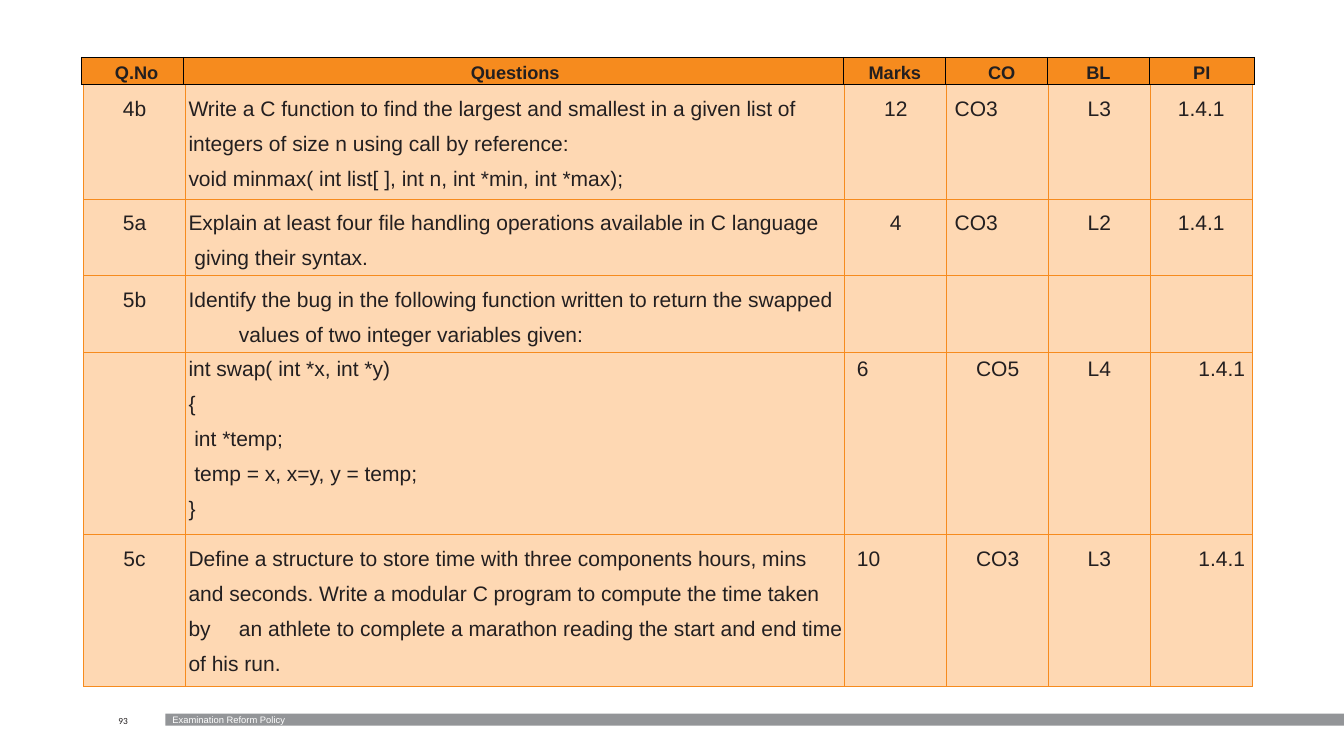
import pptx
import pptx.dml.color
import pptx.enum.shapes
import pptx.enum.text
import pptx.oxml
import pptx.oxml.ns
import pptx.util
from dataclasses import dataclass

Inches = pptx.util.Inches
ALIGN = pptx.enum.text.PP_ALIGN
MIDDLE = pptx.enum.text.MSO_ANCHOR.MIDDLE
TOP = pptx.enum.text.MSO_ANCHOR.TOP


@dataclass(frozen=True)
class Theme:
    ink: str = "231F20"
    orange: str = "F68B1E"
    peach: str = "FED8B3"
    footer_grey: str = "939598"
    white: str = "FFFFFF"
    black: str = "000000"
    font: str = "Arial"
    number_font: str = "Calibri"
    body_size: float = 15
    header_size: float = 13
    footer_size: float = 6.7


THEME = Theme()


@dataclass(frozen=True)
class Column:
    align: int = ALIGN.CENTER
    indent: float = 0
    right: float = 0


@dataclass(frozen=True)
class TableLook:
    fill: str
    border: str
    border_width: float
    size: float
    bold: bool
    spacing: float
    anchor: int
    top: float


HEADER = TableLook(THEME.orange, THEME.black, 1, THEME.header_size, True, 1.15, MIDDLE, 0.02)
BODY = TableLook(THEME.peach, THEME.orange, 0.75, THEME.body_size, False, 1.5, TOP, 0.01)

CENTERED = Column()
QUESTION = Column(ALIGN.LEFT, 0.03)
BODY_WIDTHS = [1.01, 6.54, 1.01, 1.01, 1.01, 1.01]

# Paragraphs are parted by "\n", lines within one by "\v"
HEADINGS = [("Q.No", "Questions", "Marks", "CO", "BL", "PI")]
UPPER_QUESTIONS = [
    ("4b", "Write a C function to find the largest and smallest in a given list of\n"
           "integers of size n using call by reference:\n"
           "void minmax( int list[ ], int n, int *min, int *max);", "12", "CO3", "L3", "1.4.1"),
    ("5a", "Explain at least four file handling operations available in C language\n"
           " giving their syntax.", "4", "CO3", "L2", "1.4.1"),
    ("5b", "Identify the bug in the following function written to return the swapped\v"
           "\tvalues of two integer variables given:", "", "", "", ""),
]
LOWER_QUESTIONS = [
    ("", "int swap( int *x, int *y)\n{\n int *temp;\n temp = x, x=y, y = temp;\n}",
     "6", "CO5", "L4", "1.4.1"),
    ("5c", "Define a structure to store time with three components hours, mins\v"
           "and seconds. Write a modular C program to compute the time taken\v"
           "by\tan athlete to complete a marathon reading the start and end time of his run.",
     "10", "CO3", "L3", "1.4.1"),
]


def rgb(colour):
    return pptx.dml.color.RGBColor.from_string(colour)


def add_run(paragraph, text, size, colour, font=THEME.font, bold=False):
    run = paragraph.add_run()
    run.text = text
    run.font.size = pptx.util.Pt(size)
    run.font.name = font
    run.font.bold = bold
    run.font.color.rgb = rgb(colour)


def set_indent(paragraph, indent):
    properties = paragraph._p.get_or_add_pPr()
    properties.set("marL", str(Inches(indent)))
    properties.set("indent", "0")


def set_tab(paragraph, position):
    paragraph._p.get_or_add_pPr().append(pptx.oxml.parse_xml(
        f'<a:tabLst {pptx.oxml.ns.nsdecls("a")}>'
        f'<a:tab pos="{Inches(position)}" algn="l"/></a:tabLst>'))


def set_borders(cell, colour, width):
    for side in ("lnL", "lnR", "lnT", "lnB"):
        cell._tc.get_or_add_tcPr().append(pptx.oxml.parse_xml(
            f'<a:{side} {pptx.oxml.ns.nsdecls("a")} w="{pptx.util.Pt(width)}">'
            f'<a:solidFill><a:srgbClr val="{colour}"/></a:solidFill></a:{side}>'))


def fill_cell(cell, text, column, look):
    set_borders(cell, look.border, look.border_width)
    cell.fill.solid()
    cell.fill.fore_color.rgb = rgb(look.fill)
    cell.vertical_anchor = look.anchor
    cell.margin_left = cell.margin_bottom = 0
    cell.margin_top = Inches(look.top)
    cell.margin_right = Inches(column.right)
    if not text:
        cell.text_frame.paragraphs[0].font.size = pptx.util.Pt(look.size)
        return
    for i, wording in enumerate(text.split("\n")):
        frame = cell.text_frame
        paragraph = frame.add_paragraph() if i else frame.paragraphs[0]
        paragraph.alignment = column.align
        paragraph.line_spacing = look.spacing
        set_indent(paragraph, column.indent)
        if "\t" in wording:
            set_tab(paragraph, 0.23 if "\v\t" in wording else 0.63)
        for j, line in enumerate(wording.split("\v")):
            if j:
                paragraph.add_line_break()
            add_run(paragraph, line, look.size, THEME.ink, bold=look.bold)


def add_question_table(slide, left, top, widths, heights, rows, columns, look):
    table = slide.shapes.add_table(
        len(rows), len(widths), Inches(left), Inches(top),
        Inches(sum(widths)), Inches(sum(heights))).table
    table.first_row = table.horz_banding = False
    for column, width in zip(table.columns, widths):
        column.width = Inches(width)
    for r, (row, height) in enumerate(zip(rows, heights)):
        table.rows[r].height = Inches(height)
        for c, text in enumerate(row):
            fill_cell(table.cell(r, c), text, columns[c], look)


def add_footer(slide, left, top, width, height):
    # Page number
    number_width = 0.82
    number = slide.shapes.add_textbox(
        Inches(left), Inches(top), Inches(number_width), Inches(height))
    # Grey band with the document title
    band = slide.shapes.add_shape(
        pptx.enum.shapes.MSO_SHAPE.RECTANGLE, Inches(left + number_width + 0.01), Inches(top),
        Inches(width - number_width - 0.01), Inches(height))
    band.shadow.inherit = False
    band.fill.solid()
    band.fill.fore_color.rgb = rgb(THEME.footer_grey)
    band.line.fill.background()

    for part in (number, band):
        frame = part.text_frame
        frame.word_wrap = True
        frame.vertical_anchor = MIDDLE
        frame.margin_left = frame.margin_right = frame.margin_top = frame.margin_bottom = 0
    page = number.text_frame.paragraphs[0]
    page.alignment = ALIGN.CENTER
    page.line_spacing = 1.1
    add_run(page, "93", THEME.footer_size, THEME.ink, THEME.number_font)
    title = band.text_frame.paragraphs[0]
    title.alignment = ALIGN.LEFT
    set_indent(title, 0.07)
    add_run(title, "Examination Reform Policy", THEME.footer_size, THEME.white)


def main():
    deck = pptx.Presentation()
    deck.slide_width, deck.slide_height = Inches(13.33), Inches(7.5)
    slide = deck.slides.add_slide(deck.slide_layouts[6])

    add_footer(slide, 0.81, 7.08, 12.52, 0.12)
    add_question_table(
        slide, 0.83, 3.42, BODY_WIDTHS, [1.8, 1.44], LOWER_QUESTIONS,
        [CENTERED, QUESTION, Column(ALIGN.LEFT, 0.12), CENTERED, CENTERED,
         Column(ALIGN.RIGHT, right=0.07)], BODY)
    add_question_table(
        slide, 0.83, 0.84, BODY_WIDTHS, [1.07, 0.7, 0.7], UPPER_QUESTIONS,
        [CENTERED, QUESTION, CENTERED, Column(ALIGN.LEFT, 0.08), CENTERED, CENTERED], BODY)
    add_question_table(
        slide, 0.81, 0.57, [1.01, 6.55, 1.01, 1.01, 1.01, 1.04], [0.25], HEADINGS,
        [Column(indent=0.08), Column(indent=0.03), CENTERED, Column(indent=0.1),
         CENTERED, CENTERED], HEADER)
    deck.save("out.pptx")


if __name__ == "__main__":
    main()
